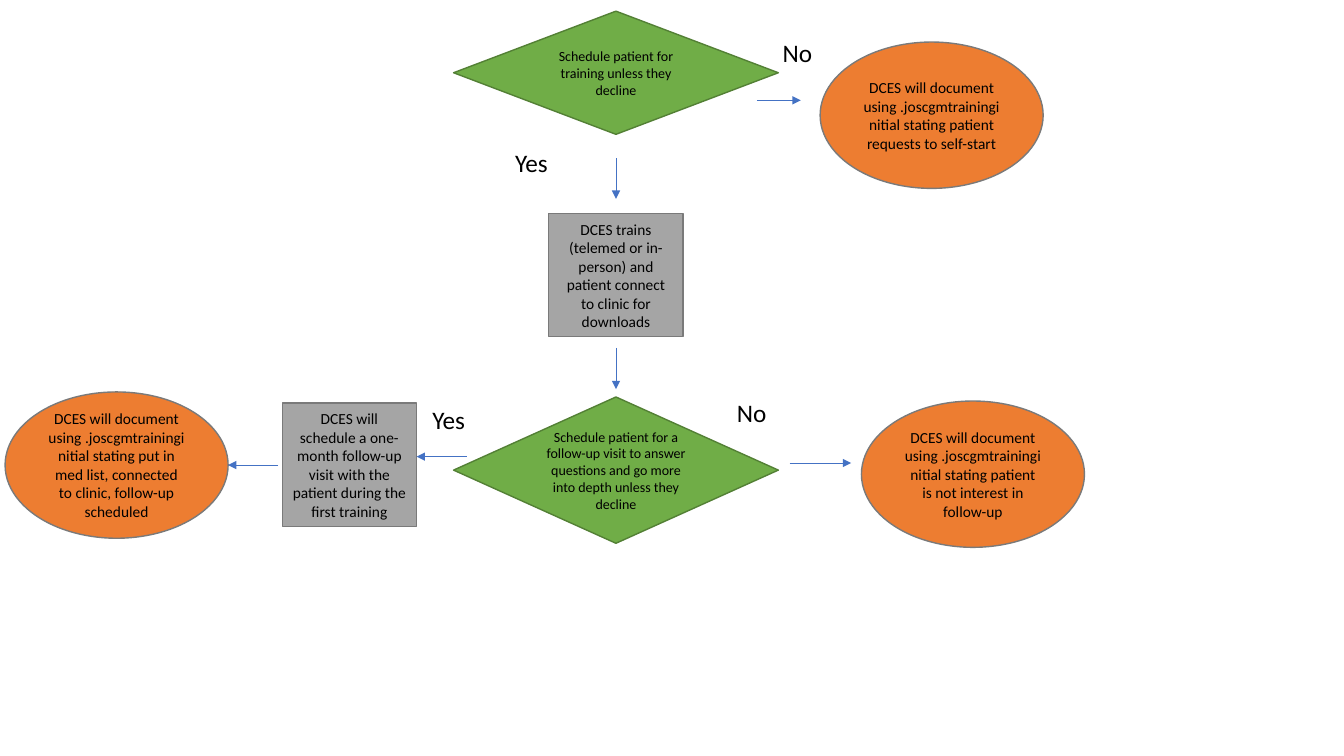
from lxml import etree
from pptx import Presentation
from pptx.dml.color import RGBColor
from pptx.enum.shapes import MSO_CONNECTOR, MSO_SHAPE
from pptx.enum.text import MSO_ANCHOR, PP_ALIGN
from pptx.oxml.ns import qn
from pptx.util import Pt

FONT = "Calibri"
BLACK = "000000"
ARROW_COLOUR = "4472C4"
SPINE = 440

KINDS = {
    "decision": (MSO_SHAPE.DIAMOND, "70AD47", "538035", 10),
    "record": (MSO_SHAPE.OVAL, "ED7D31", "7A7A7A", 11),
    "visit": (MSO_SHAPE.RECTANGLE, "A5A5A5", "7A7A7A", 11),
}
SIZES = {"decision": (232, 104.5), "record": (159.3, 104.5), "visit": (96, 88)}

STEPS = [
    ("decision", SPINE, 52, 88,
     "Schedule patient for training unless they decline"),
    ("record", 665.5, 82.3, None,
     "DCES will document using .joscgmtraininginitial stating patient requests to self-start"),
    ("visit", SPINE, 196.6, None,
     "DCES trains (telemed or in-person) and patient connect to clinic for downloads"),
    ("record", 695, 338.7, None,
     "DCES will document using .joscgmtraininginitial stating patient is not interest in follow-up"),
    ("decision", SPINE, 335.8, None,
     "Schedule patient for a follow-up visit to answer questions and go more into depth "
     "unless they decline"),
    ("visit", 249.6, 332, None,
     "DCES will schedule a one- month follow-up visit with the patient during the first training"),
    ("record", 83.3, 332.2, None,
     "DCES will document using .joscgmtraininginitial stating put in med list, connected "
     "to clinic, follow-up scheduled"),
]

ANSWERS = [
    ("No", 552, 23),
    ("Yes", 360.8, 101.8),
    ("No", 519.3, 280.3),
    ("Yes", 301.7, 285.3),
]
ANSWER_WIDTHS = {"No": 55.5, "Yes": 59}
ANSWER_HEIGHT = 29

ARROWS = [
    (540.7, 71.7, 572, 71.7),
    (SPINE, 113, SPINE, 142),
    (SPINE, 248.5, SPINE, 278),
    (564, 330.7, 608, 330.7),
    (333.5, 326.2, 297.6, 326.2),
    (198.7, 332.2, 162.9, 332.2),
]


def colour(hex_code):
    return RGBColor.from_string(hex_code)


def write(frame, text, size, align):
    frame.word_wrap = True
    paragraph = frame.paragraphs[0]
    paragraph.text = text
    paragraph.alignment = align
    paragraph.font.name = FONT
    paragraph.font.size = Pt(size)
    paragraph.font.color.rgb = colour(BLACK)


def add_step(shapes, kind, centre_x, centre_y, own_height, text):
    outline, fill, border, size = KINDS[kind]
    width, height = SIZES[kind]
    height = own_height or height
    step = shapes.add_shape(outline, Pt(centre_x - width / 2), Pt(centre_y - height / 2),
                            Pt(width), Pt(height))
    step.shadow.inherit = False
    step.fill.solid()
    step.fill.fore_color.rgb = colour(fill)
    step.line.color.rgb = colour(border)
    step.line.width = Pt(1)
    step.text_frame.vertical_anchor = MSO_ANCHOR.MIDDLE
    write(step.text_frame, text, size, PP_ALIGN.CENTER)


def add_answer(shapes, text, left, top):
    answer = shapes.add_textbox(Pt(left), Pt(top), Pt(ANSWER_WIDTHS[text]), Pt(ANSWER_HEIGHT))
    write(answer.text_frame, text, 18, PP_ALIGN.LEFT)


def add_arrow(shapes, *ends):
    arrow = shapes.add_connector(MSO_CONNECTOR.STRAIGHT, *map(Pt, ends))
    arrow.line.color.rgb = colour(ARROW_COLOUR)
    arrow.line.width = Pt(0.5)
    etree.SubElement(arrow.line._get_or_add_ln(), qn("a:tailEnd"), type="triangle")
    etree.SubElement(arrow._element.spPr, qn("a:effectLst"))


def main():
    deck = Presentation()
    deck.slide_width, deck.slide_height = Pt(960), Pt(540)
    shapes = deck.slides.add_slide(deck.slide_layouts[6]).shapes
    for step in STEPS:
        add_step(shapes, *step)
    for answer in ANSWERS:
        add_answer(shapes, *answer)
    for arrow in ARROWS:
        add_arrow(shapes, *arrow)
    deck.save("out.pptx")


if __name__ == "__main__":
    main()
